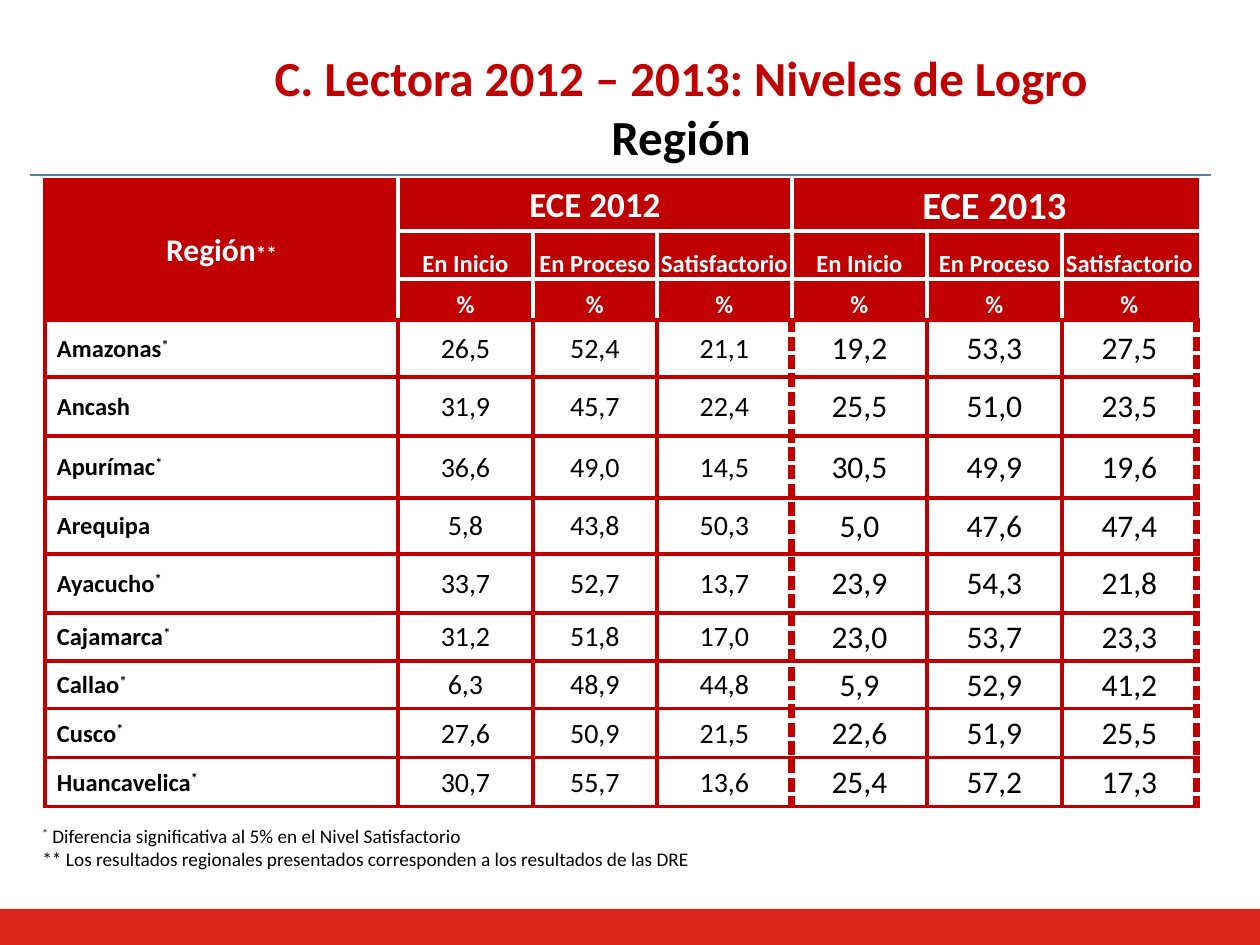
from lxml import etree
from pptx import Presentation
from pptx.dml.color import RGBColor
from pptx.enum.shapes import MSO_CONNECTOR, MSO_SHAPE
from pptx.enum.text import MSO_ANCHOR, PP_ALIGN
from pptx.oxml.ns import qn
from pptx.util import Pt

EMU_PER_PX = 914400 / 126
CENTER, LEFT = PP_ALIGN.CENTER, PP_ALIGN.LEFT
TOP, MIDDLE, BOTTOM = MSO_ANCHOR.TOP, MSO_ANCHOR.MIDDLE, MSO_ANCHOR.BOTTOM
RECTANGLE = MSO_SHAPE.RECTANGLE
STRAIGHT = MSO_CONNECTOR.STRAIGHT

FONT = "Calibri"
RED, WHITE, BLACK = "C00000", "FFFFFF", "000000"
FOOTER_RED, RULE_BLUE = "DA251D", "4B7EBC"

COLUMN_WIDTHS = [353, 135, 124, 135, 135, 135, 135]
ROW_HEIGHTS = [51, 48, 41, 57, 59, 62, 56, 59, 48, 48, 49, 49]
HEADER_ROWS = 3
LEVELS = ["En Inicio", "En Proceso", "Satisfactorio"]
REGIONS = [
    ("Amazonas", "*", "26,5 52,4 21,1 19,2 53,3 27,5"),
    ("Ancash", "", "31,9 45,7 22,4 25,5 51,0 23,5"),
    ("Apurímac", "*", "36,6 49,0 14,5 30,5 49,9 19,6"),
    ("Arequipa", "", "5,8 43,8 50,3 5,0 47,6 47,4"),
    ("Ayacucho", "*", "33,7 52,7 13,7 23,9 54,3 21,8"),
    ("Cajamarca", "*", "31,2 51,8 17,0 23,0 53,7 23,3"),
    ("Callao", "*", "6,3 48,9 44,8 5,9 52,9 41,2"),
    ("Cusco", "*", "27,6 50,9 21,5 22,6 51,9 25,5"),
    ("Huancavelica", "*", "30,7 55,7 13,6 25,4 57,2 17,3"),
]


def px(length):
    return round(length * EMU_PER_PX)


def color(value):
    return RGBColor.from_string(value)


def write_text(paragraph, text, size=14, fill=BLACK, bold=False, align=LEFT, raised=False):
    paragraph.alignment = align
    run = paragraph.add_run()
    run.text = text
    run.font.name = FONT
    run.font.size = Pt(size)
    run.font.bold = bold
    run.font.color.rgb = color(fill)
    if raised:
        run.font._element.set("baseline", "30000")


def add_rectangle(slide, left, top, width, height, fill):
    shape = slide.shapes.add_shape(RECTANGLE, px(left), px(top), px(width), px(height))
    shape.shadow.inherit = False
    shape.fill.solid()
    shape.fill.fore_color.rgb = color(fill)
    shape.line.fill.background()


def add_text_frame(slide, left, top, width, height, anchor=TOP):
    frame = slide.shapes.add_textbox(px(left), px(top), px(width), px(height)).text_frame
    frame.word_wrap = True
    frame.vertical_anchor = anchor
    return frame


def add_rule(slide, left, right, y):
    rule = slide.shapes.add_connector(STRAIGHT, px(left), px(y), px(right), px(y))
    rule.line.color.rgb = color(RULE_BLUE)
    rule.line.width = Pt(0.75)
    etree.SubElement(rule._element.spPr, qn("a:effectLst"))


def set_border(cell, side, fill, dashed=False):
    width = Pt(4.5 if dashed else 2.25)
    line = etree.SubElement(cell._tc.get_or_add_tcPr(), qn(f"a:ln{side}"), w=str(width))
    solid = etree.SubElement(line, qn("a:solidFill"))
    etree.SubElement(solid, qn("a:srgbClr"), val=fill)
    etree.SubElement(line, qn("a:prstDash"), val="sysDash" if dashed else "solid")


def set_borders(cell, row, column):
    header = row < HEADER_ROWS
    inner = WHITE if header else RED
    last_column = column + max(cell.span_width, 1) - 1
    last_row = row + max(cell.span_height, 1) - 1
    set_border(cell, "L", inner if column else RED, not header and column == 4)
    set_border(cell, "R", inner if last_column < 6 else RED, not header and column in (3, 6))
    set_border(cell, "T", inner if row not in (0, HEADER_ROWS) else RED)
    set_border(cell, "B", inner if last_row != HEADER_ROWS - 1 else RED)


def format_cell(cell, row, column):
    set_borders(cell, row, column)
    cell.margin_left = px(12 if row >= HEADER_ROWS and column == 0 else 1)
    cell.margin_right = cell.margin_top = px(1)
    cell.margin_bottom = 0
    cell.vertical_anchor = BOTTOM if row in (1, 2) and column else MIDDLE
    if row < HEADER_ROWS:
        cell.fill.solid()
        cell.fill.fore_color.rgb = color(RED)
    else:
        cell.fill.background()


def write_header(table):
    def heading(row, column, text, size):
        paragraph = table.cell(row, column).text_frame.paragraphs[0]
        write_text(paragraph, text, size=size, fill=WHITE, bold=True, align=CENTER)

    table.cell(0, 0).merge(table.cell(2, 0))
    heading(0, 0, "Región", 18)
    heading(0, 0, "**", 12)
    for column, text, size in ((1, "ECE 2012", 20), (4, "ECE 2013", 22)):
        table.cell(0, column).merge(table.cell(0, column + 2))
        heading(0, column, text, size)
    for column, level in enumerate(LEVELS * 2, start=1):
        heading(1, column, level, 14)
        heading(2, column, "%", 14)


def write_regions(table):
    for row, (region, mark, values) in enumerate(REGIONS, start=HEADER_ROWS):
        paragraph = table.cell(row, 0).text_frame.paragraphs[0]
        write_text(paragraph, region, bold=True)
        if mark:
            write_text(paragraph, mark, bold=True, raised=True)
        for column, value in enumerate(values.split(), start=1):
            paragraph = table.cell(row, column).text_frame.paragraphs[0]
            write_text(paragraph, value, size=16 if column < 4 else 18, align=CENTER)


def add_results_table(slide, left, top):
    table = slide.shapes.add_table(
        len(ROW_HEIGHTS), len(COLUMN_WIDTHS), px(left), px(top),
        px(sum(COLUMN_WIDTHS)), px(sum(ROW_HEIGHTS))).table
    table.first_row = table.horz_banding = False
    for column, width in zip(table.columns, COLUMN_WIDTHS):
        column.width = px(width)
    for row, height in zip(table.rows, ROW_HEIGHTS):
        row.height = px(height)
    write_header(table)
    write_regions(table)
    for row in range(len(ROW_HEIGHTS)):
        for column in range(len(COLUMN_WIDTHS)):
            format_cell(table.cell(row, column), row, column)


def add_title(slide):
    frame = add_text_frame(slide, 105, 27, 1152, 158, MIDDLE)
    write_text(frame.paragraphs[0], "C. Lectora 2012 – 2013: Niveles de Logro",
               size=28, fill=RED, bold=True, align=CENTER)
    write_text(frame.add_paragraph(), "Región", size=28, bold=True, align=CENTER)


def add_footnotes(slide):
    frame = add_text_frame(slide, 30, 818, 1191, 59)
    first = frame.paragraphs[0]
    write_text(first, "*", size=11, raised=True)
    write_text(first, " Diferencia significativa al 5% en el Nivel Satisfactorio", size=11)
    write_text(frame.add_paragraph(), "** Los resultados regionales presentados "
               "corresponden a los resultados de las DRE", size=11)


def main():
    presentation = Presentation()
    presentation.slide_width, presentation.slide_height = px(1260), px(945)
    slide = presentation.slides.add_slide(presentation.slide_layouts[6])
    add_rectangle(slide, 0, 909, 1260, 36, FOOTER_RED)
    add_results_table(slide, 45, 180)
    add_rectangle(slide, 1, 0, 1221, 175, WHITE)
    add_title(slide)
    add_rule(slide, 30, 1211, 175)
    add_footnotes(slide)
    presentation.save("out.pptx")


if __name__ == "__main__":
    main()
